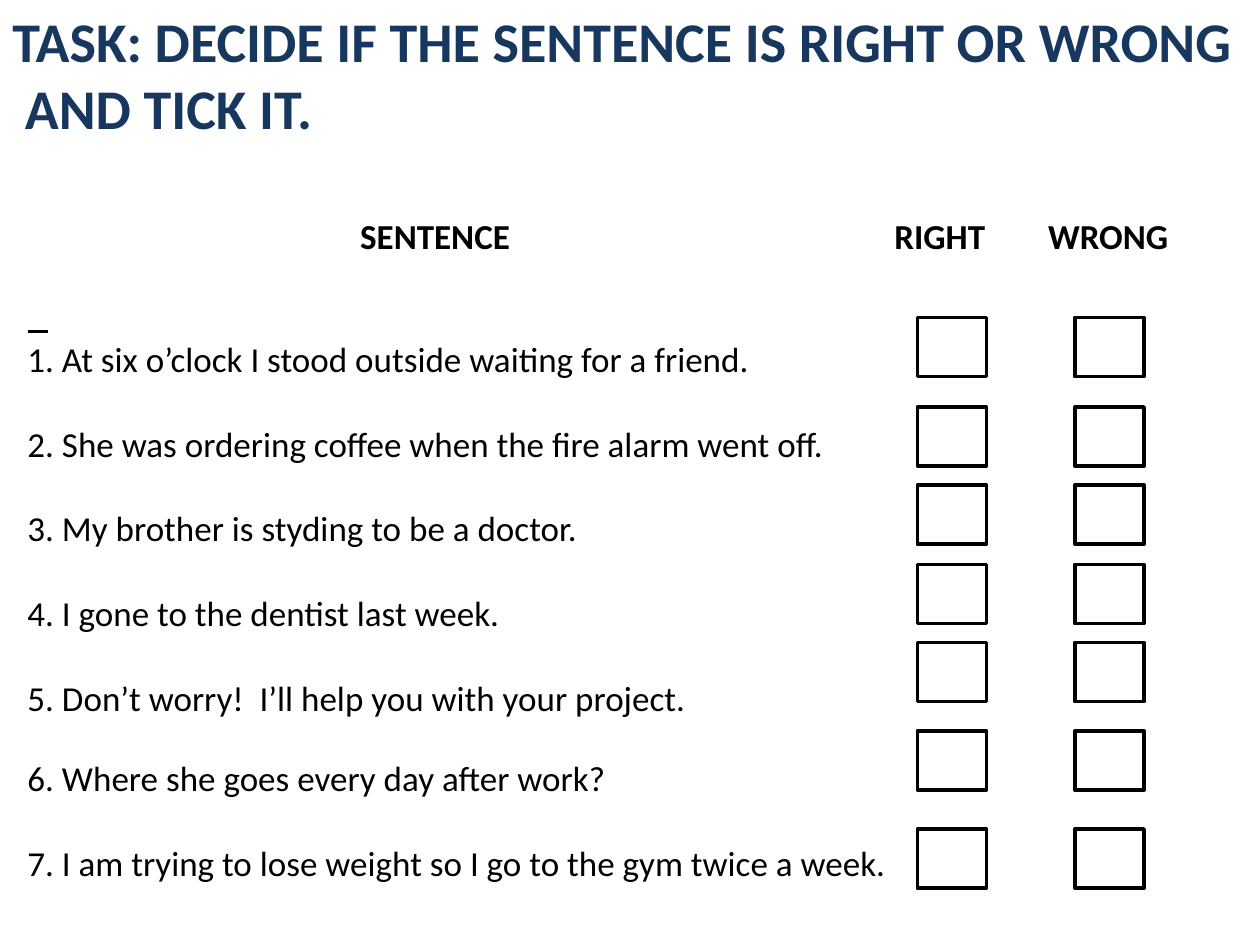
import pptx
import pptx.util
import pptx.dml.color
import pptx.enum.shapes
import pptx.oxml
import pptx.oxml.ns
from lxml import etree

TITLE = "TASK: DECIDE IF THE SENTENCE IS RIGHT OR WRONG AND TICK IT."
HEADS = ["SENTENCE", "RIGHT", "WRONG"]
TABS = [2.64, 6.88, 8.1]  # left edge of each heading, from the text edge

# Sentence, space above it in points, top of its tick boxes in inches
ROWS = [
    ("1. At six o’clock I stood outside waiting for a friend.", 46.4, 2.52),
    ("2. She was ordering coffee when the fire alarm went off.", 24.4, 3.23),
    ("3. My brother is styding to be a doctor.", 24.4, 3.85),
    ("4. I gone to the dentist last week.", 24.4, 4.48),
    ("5. Don’t worry!  I’ll help you with your project.", 24.4, 5.1),
    ("6. Where she goes every day after work?", 22, 5.8),
    ("7. I am trying to lose weight so I go to the gym twice a week.", 24.4, 6.58),
]
COLS = [7.28, 8.53]
TICK = (0.55, 0.47)

inch = pptx.util.Inches
qn = pptx.oxml.ns.qn


def color(code):
    return pptx.dml.color.RGBColor.from_string(code)


def frame(slide, left, top, width, height, inset=0.05):
    box = slide.shapes.add_textbox(*map(inch, (left, top, width, height)))
    box.text_frame.word_wrap = True
    box.text_frame.margin_top = inch(inset)
    return box.text_frame


def write(para, text, size=20, bold=False, ink="000000", above=0, hang=0, tabs=()):
    para.space_before = pptx.util.Pt(above)
    run = para.add_run()
    run.text = text
    run.font.name = "Calibri"
    run.font.size = pptx.util.Pt(size)
    run.font.bold = bold
    run.font.color.rgb = color(ink)
    props = para._p.get_or_add_pPr()
    if hang:
        props.set("marL", str(inch(hang)))
        props.set("indent", str(-inch(hang)))
    if tabs:
        stops = etree.SubElement(props, qn("a:tabLst"))
        for pos in tabs:
            etree.SubElement(stops, qn("a:tab"), pos=str(inch(pos)), algn="l")


def main():
    deck = pptx.Presentation()
    deck.slide_width, deck.slide_height = inch(10), inch(7.5)
    slide = deck.slides.add_slide(deck.slide_layouts[6])

    # Headings and sentences
    body = frame(slide, 0.12, 1.31, 9.53, 6.06, inset=0.39)
    write(body.paragraphs[0], "\t" + "\t".join(HEADS), bold=True, tabs=TABS)
    for text, above, _ in ROWS:
        write(body.add_paragraph(), text, above=above)

    # Short rule above the first sentence
    rule = slide.shapes.add_connector(
        pptx.enum.shapes.MSO_CONNECTOR.STRAIGHT,
        *map(inch, (0.22, 2.63, 0.38, 2.63)))
    rule.line.color.rgb = color("000000")
    rule.line.width = pptx.util.Pt(2)
    etree.SubElement(rule._element.spPr, qn("a:effectLst"))

    # Tick boxes
    for left in COLS:
        for _, _, top in ROWS:
            tick = slide.shapes.add_shape(
                pptx.enum.shapes.MSO_SHAPE.RECTANGLE,
                *map(inch, (left, top, *TICK)))
            tick.shadow.inherit = False
            tick.fill.solid()
            tick.fill.fore_color.rgb = color("FFFFFF")
            tick.line.color.rgb = color("000000")
            tick.line.width = pptx.util.Pt(2)

    # Title
    head = frame(slide, 0, 0, 10, 1.18)
    write(head.paragraphs[0], TITLE, size=32, bold=True, ink="17375E", hang=0.1)

    deck.save("out.pptx")


if __name__ == "__main__":
    main()
